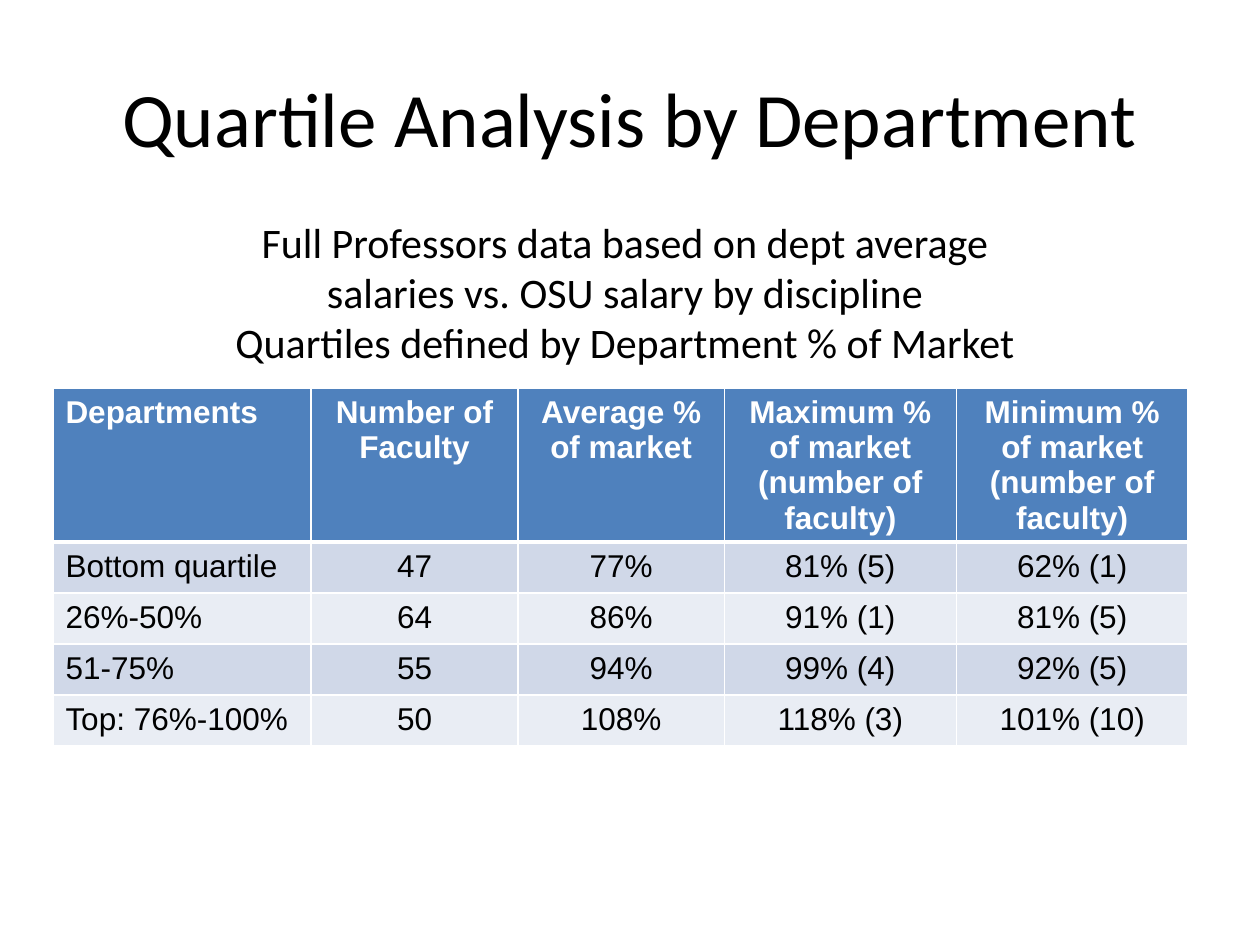
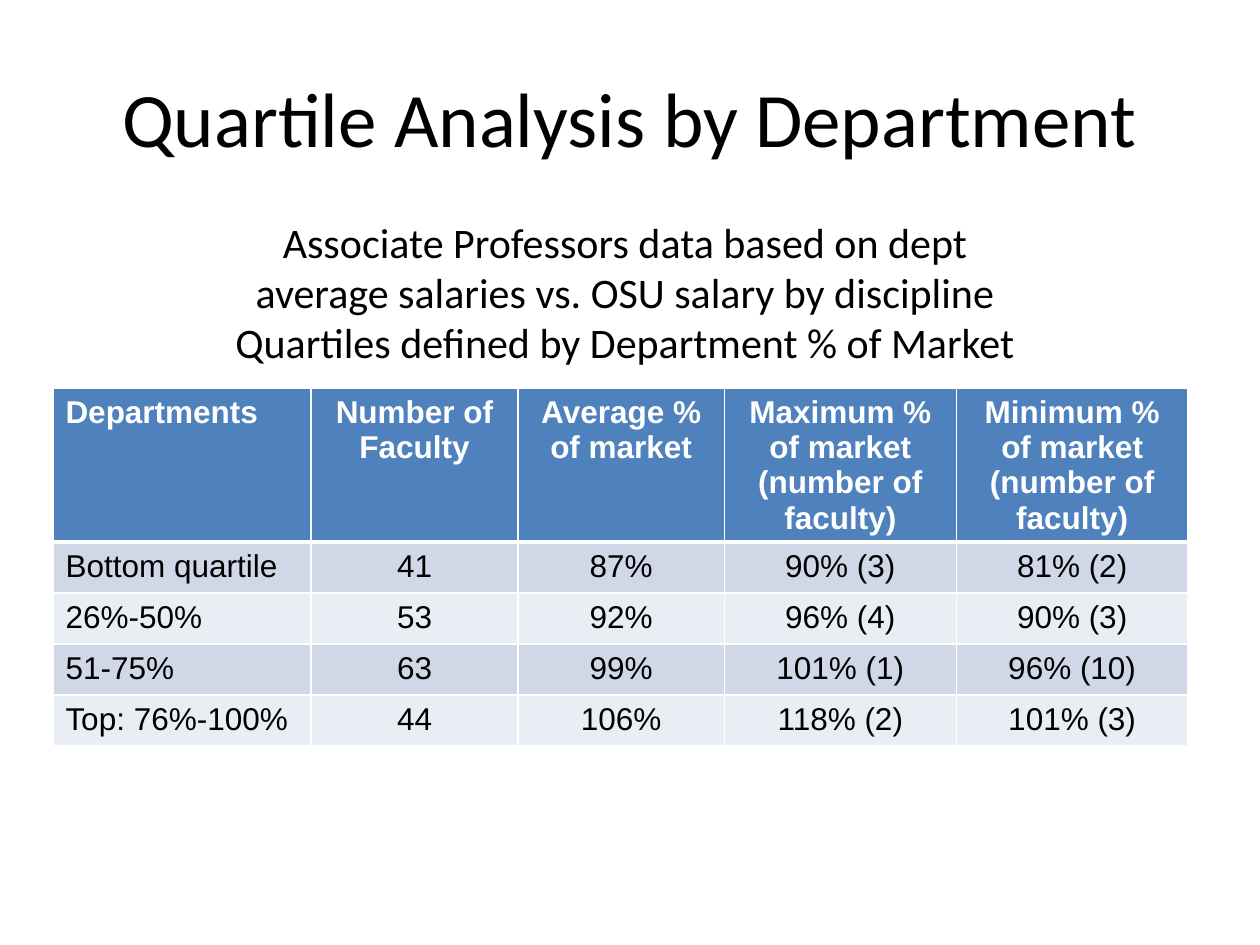
from dataclasses import dataclass

from lxml.etree import SubElement
from pptx import Presentation
from pptx.dml.color import RGBColor
from pptx.enum.text import MSO_ANCHOR, PP_ALIGN
from pptx.oxml.ns import qn
from pptx.slide import Slide
from pptx.table import _Cell
from pptx.text.text import TextFrame
from pptx.util import Inches, Pt

COLORS = {
    "text": "000000",
    "white": "FFFFFF",
    "header": "4F81BD",
    "odd_row": "D0D8E8",
    "even_row": "E9EDF4",
}
SLIDE_WIDTH, SLIDE_HEIGHT = Inches(10), Inches(7.5)

TITLE = "Quartile Analysis by Department"
QUARTILE_NOTE = "Quartiles defined by Department % of Market"
HEADERS = (
    "Departments",
    "Number of Faculty",
    "Average % of market",
    "Maximum % of market\n(number of faculty)",
    "Minimum % of market (number of faculty)",
)
QUARTILES = ("Bottom quartile", "26%-50%", "51-75%", "Top: 76%-100%")
COLUMN_SHARES = (0.205, 0.164, 0.164, 0.184, 0.184)
HEADER_HEIGHT, ROW_HEIGHT = Inches(1.22), Inches(0.405)
THIN_BORDER, THICK_BORDER = Pt(1), Pt(3)


@dataclass(frozen=True)
class Area:
    """A rectangle given in shares of the slide's width and height."""
    left: float
    top: float
    width: float
    height: float

    def box(self) -> tuple[int, int, int, int]:
        return (
            int(self.left * SLIDE_WIDTH),
            int(self.top * SLIDE_HEIGHT),
            int(self.width * SLIDE_WIDTH),
            int(self.height * SLIDE_HEIGHT),
        )


@dataclass(frozen=True)
class TextStyle:
    font: str
    size: int
    color: str = "text"
    bold: bool = False
    align: PP_ALIGN = PP_ALIGN.CENTER


@dataclass(frozen=True)
class RankAnalysis:
    rank: str
    figures: tuple[tuple[str, ...], ...]


TITLE_AREA = Area(0.05, 0.04, 0.9, 1 / 6)
SUBTITLE_AREA = Area(0.175, 0.222, 0.642, 0.216)
TABLE_AREA = Area(0.042, 0.411, sum(COLUMN_SHARES), 0.38)

TITLE_STYLE = TextStyle("Calibri", 44)
SUBTITLE_STYLE = TextStyle("Calibri", 24)

ANALYSES = (
    RankAnalysis("Full Professors", (
        ("47", "77%", "81% (5)", "62% (1)"),
        ("64", "86%", "91% (1)", "81% (5)"),
        ("55", "94%", "99% (4)", "92% (5)"),
        ("50", "108%", "118% (3)", "101% (10)"),
    )),
    RankAnalysis("Associate Professors", (
        ("41", "87%", "90% (3)", "81% (2)"),
        ("53", "92%", "96% (4)", "90% (3)"),
        ("63", "99%", "101% (1)", "96% (10)"),
        ("44", "106%", "118% (2)", "101% (3)"),
    )),
)


def write_text(text_frame: TextFrame, text: str, style: TextStyle) -> None:
    text_frame.text = text
    for paragraph in text_frame.paragraphs:
        paragraph.alignment = style.align
        for run in paragraph.runs:
            run.font.name = style.font
            run.font.size = Pt(style.size)
            run.font.bold = style.bold
            run.font.color.rgb = RGBColor.from_string(COLORS[style.color])


def set_borders(cell: _Cell, top: int, bottom: int) -> None:
    """Draw white borders; must run before the fill, which follows them in the XML."""
    properties = cell._tc.get_or_add_tcPr()
    sides = {"L": THIN_BORDER, "R": THIN_BORDER, "T": top, "B": bottom}
    for side, width in sides.items():
        line = SubElement(properties, qn(f"a:ln{side}"), w=str(int(width)))
        fill = SubElement(line, qn("a:solidFill"))
        SubElement(fill, qn("a:srgbClr"), val=COLORS["white"])


def add_title(slide: Slide) -> None:
    title = slide.shapes.title
    title.left, title.top, title.width, title.height = TITLE_AREA.box()
    title.text_frame.vertical_anchor = MSO_ANCHOR.MIDDLE
    write_text(title.text_frame, TITLE, TITLE_STYLE)


def add_subtitle(slide: Slide, rank: str) -> None:
    text_frame = slide.shapes.add_textbox(*SUBTITLE_AREA.box()).text_frame
    text_frame.word_wrap = True
    basis = f"{rank} data based on dept average salaries vs. OSU salary by discipline"
    write_text(text_frame, f"{basis}\n{QUARTILE_NOTE}", SUBTITLE_STYLE)


def add_quartile_table(slide: Slide, figures: tuple[tuple[str, ...], ...]) -> None:
    rows = [HEADERS] + [(name, *values) for name, values in zip(QUARTILES, figures)]
    table = slide.shapes.add_table(len(rows), len(HEADERS), *TABLE_AREA.box()).table
    for column, share in zip(table.columns, COLUMN_SHARES):
        column.width = int(share * SLIDE_WIDTH)

    for row_index, values in enumerate(rows):
        is_header = row_index == 0
        table.rows[row_index].height = HEADER_HEIGHT if is_header else ROW_HEIGHT
        row_color = "header" if is_header else ("even_row", "odd_row")[row_index % 2]
        for column_index, value in enumerate(values):
            cell = table.cell(row_index, column_index)
            set_borders(
                cell,
                top=THICK_BORDER if row_index == 1 else THIN_BORDER,
                bottom=THICK_BORDER if is_header else THIN_BORDER,
            )
            cell.fill.solid()
            cell.fill.fore_color.rgb = RGBColor.from_string(COLORS[row_color])
            write_text(cell.text_frame, value, TextStyle(
                "Arial", 18,
                color="white" if is_header else "text",
                bold=is_header,
                align=PP_ALIGN.CENTER if column_index else PP_ALIGN.LEFT,
            ))


def main() -> None:
    presentation = Presentation()
    presentation.slide_width, presentation.slide_height = SLIDE_WIDTH, SLIDE_HEIGHT
    title_only = presentation.slide_layouts.get_by_name("Title Only")
    for analysis in ANALYSES:
        slide = presentation.slides.add_slide(title_only)
        add_title(slide)
        add_quartile_table(slide, analysis.figures)
        add_subtitle(slide, analysis.rank)
    presentation.save("out.pptx")


if __name__ == "__main__":
    main()
